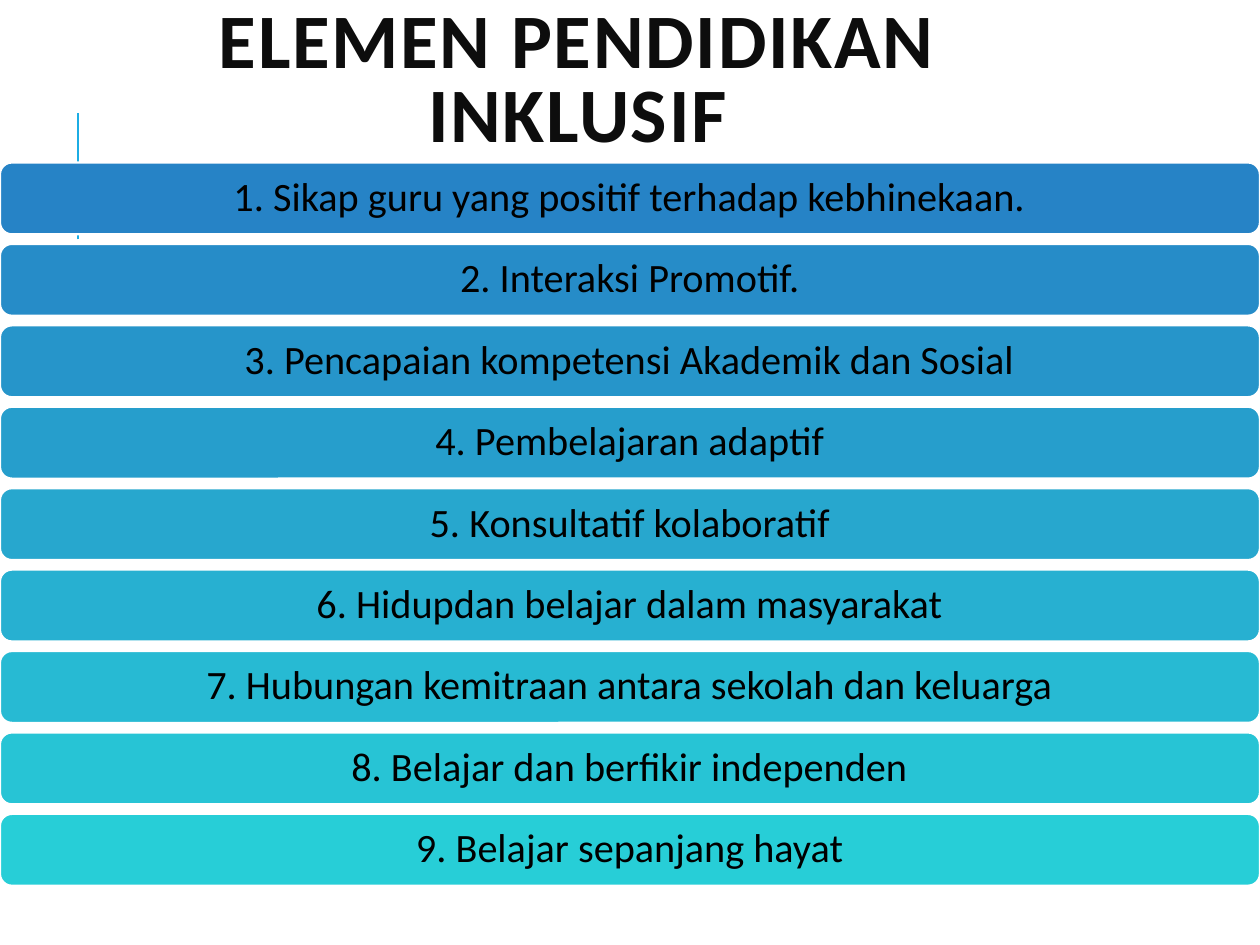
from pptx import Presentation
from pptx.dml.color import RGBColor
from pptx.enum.shapes import MSO_CONNECTOR as Conn, MSO_SHAPE as Shape
from pptx.enum.text import MSO_ANCHOR as Anchor, PP_ALIGN as Align
from pptx.oxml.ns import qn
from pptx.util import Inches, Pt
from lxml.etree import SubElement

ITEMS = [
    ("1. Sikap guru yang positif terhadap kebhinekaan.", "2683C6"),
    ("2. Interaksi Promotif.", "268CC8"),
    ("3. Pencapaian kompetensi Akademik dan Sosial", "2695CA"),
    ("4. Pembelajaran adaptif", "269ECC"),
    ("5. Konsultatif kolaboratif", "27A7CE"),
    ("6. Hidupdan belajar dalam masyarakat", "27B0D1"),
    ("7. Hubungan kemitraan antara sekolah dan keluarga", "27BAD3"),
    ("8. Belajar dan berfikir independen", "27C4D5"),
    ("9. Belajar sepanjang hayat", "27CED7"),
]


def color(code):
    return RGBColor.from_string(code)


def write(shape, text, size, code, spacing, bold=False):
    frame = shape.text_frame
    frame.word_wrap = True
    frame.vertical_anchor = Anchor.MIDDLE
    para = frame.paragraphs[0]
    para.alignment = Align.CENTER
    para.line_spacing = spacing
    run = para.add_run()
    run.text = text
    font = run.font
    font.name = "Calibri"
    font.size = Pt(size)
    font.bold = bold
    font.color.rgb = color(code)
    return run


def add_rule(slide, x, top, height):
    rule = slide.shapes.add_connector(
        Conn.STRAIGHT, Inches(x), Inches(top + height), Inches(x), Inches(top))
    rule.line.color.rgb = color("1CADE4")
    rule.line.width = Pt(1.5)
    SubElement(rule._element.spPr, qn("a:effectLst"))


def add_title(slide, left, top, width, height):
    box = slide.shapes.add_textbox(
        Inches(left), Inches(top), Inches(width), Inches(height))
    run = write(box, "ELEMEN PENDIDIKAN INKLUSIF", 44, "0D0D0D", 0.8, True)
    run.font._element.set("spc", "100")


def add_bars(slide, left, top, width, height, bar=0.57):
    pitch = (height - bar) / (len(ITEMS) - 1)
    for i, (text, fill) in enumerate(ITEMS):
        shape = slide.shapes.add_shape(
            Shape.ROUNDED_RECTANGLE, Inches(left), Inches(top + i * pitch),
            Inches(width), Inches(bar))
        shape.shadow.inherit = False
        shape.fill.solid()
        shape.fill.fore_color.rgb = color(fill)
        shape.line.color.rgb = color("FFFFFF")
        shape.line.width = Pt(1.25)
        write(shape, text, 23, "000000", 0.9)


def main():
    deck = Presentation()
    deck.slide_width = Inches(10)
    deck.slide_height = Inches(7.5)
    slide = deck.slides.add_slide(deck.slide_layouts[6])
    add_rule(slide, 0.62, 0.9, 1)
    add_title(slide, 0.5, 0.3, 8.17, 0.72)
    add_bars(slide, 0, 1.29, 10, 5.74)
    deck.save("out.pptx")


if __name__ == "__main__":
    main()
